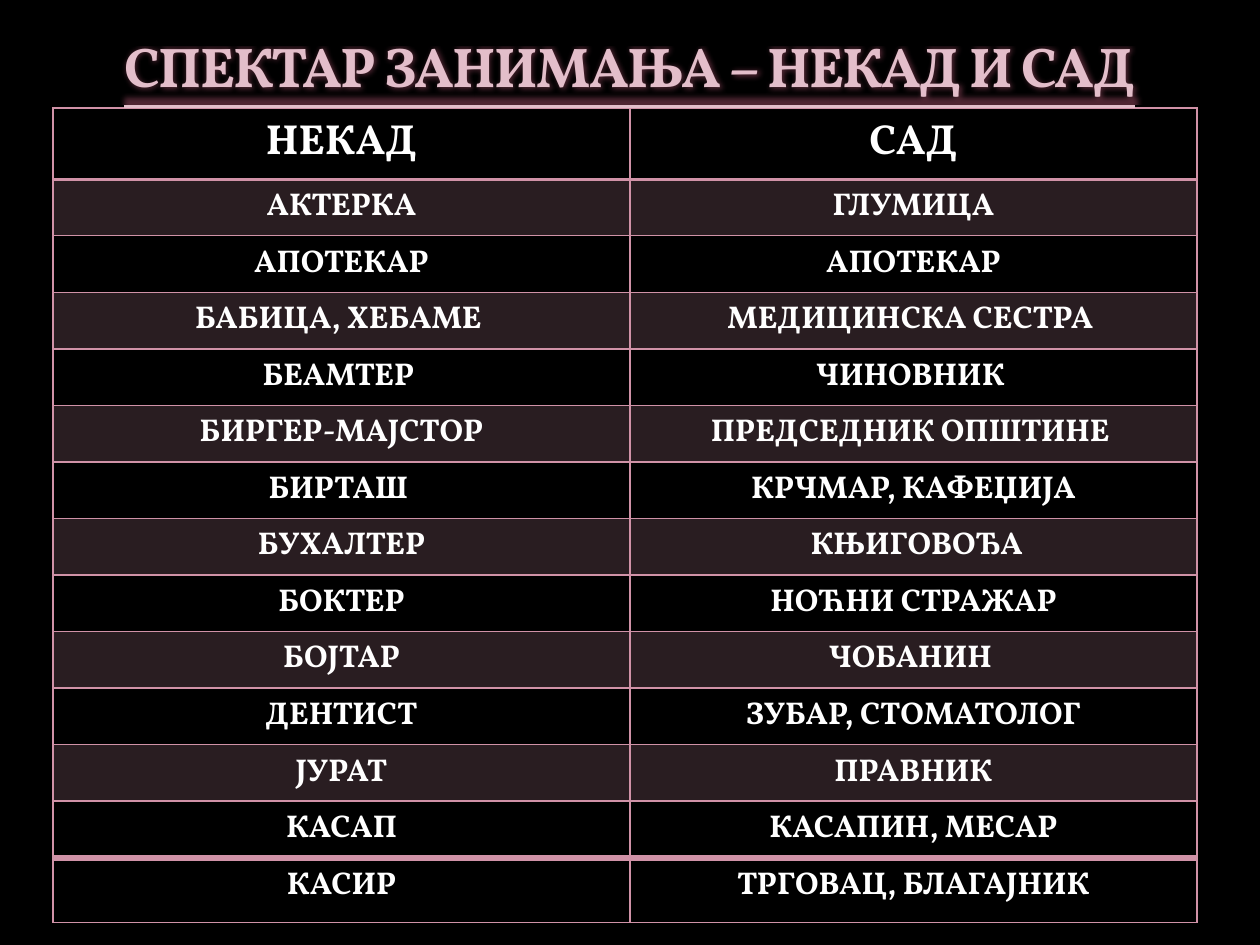
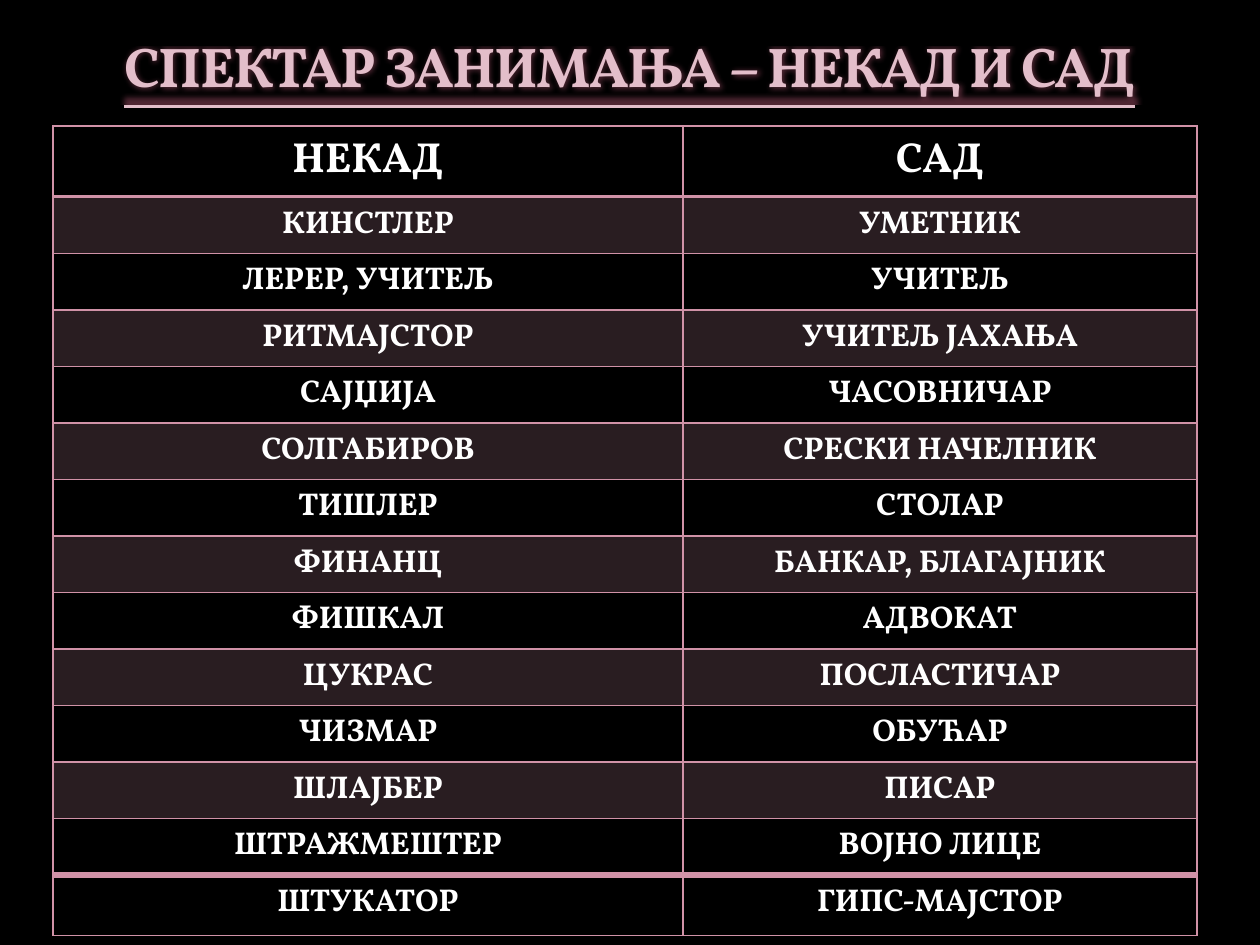
from lxml import etree
from pptx import Presentation
from pptx.dml.color import RGBColor
from pptx.enum.text import MSO_ANCHOR, PP_ALIGN
from pptx.oxml import parse_xml
from pptx.oxml.ns import nsdecls, qn
from pptx.util import Cm, Pt

CENTER = PP_ALIGN.CENTER
TOP = MSO_ANCHOR.TOP
BLANK_LAYOUT = 6

COLORS = {
    "background": "000000",
    "title": "E3BECA",
    "title_outline": "3C4422",
    "title_glow": "E66E92",
    "rose": "D092A7",
    "text": "FFFFFF",
}
FONT = "Vollkorn"
TITLE = "СПЕКТАР ЗАНИМАЊА – НЕКАД И САД"
HEADINGS = ("НЕКАД", "САД")

TITLE_FORMAT = {"name": FONT, "size": Pt(32), "bold": True, "underline": True}
HEADING_FORMAT = {"name": FONT, "size": Pt(24), "bold": True}
ENTRY_FORMAT = {**HEADING_FORMAT, "size": Pt(18)}

TABLE_LEFT = Cm(1.07)
HEADING_HEIGHT = Cm(1.43)
ENTRY_HEIGHT = Cm(1.14)
BAND_ALPHA = 20000

OCCUPATION_SLIDES = [
    {
        "top": Cm(2.18),
        "columns": (Cm(11.63), Cm(11.43)),
        "last_height": Cm(1.3),
        "occupations": [
            ("АКТЕРКА", "ГЛУМИЦА"),
            ("АПОТЕКАР", "АПОТЕКАР"),
            ("БАБИЦА, ХЕБАМЕ ", "МЕДИЦИНСКА СЕСТРА "),
            ("БЕАМТЕР ", "ЧИНОВНИК "),
            ("БИРГЕР-МАЈСТОР", "ПРЕДСЕДНИК ОПШТИНЕ "),
            ("БИРТАШ ", "КРЧМАР, КАФЕЏИЈА"),
            ("БУХАЛТЕР", " КЊИГОВОЂА"),
            ("БОКТЕР", "НОЋНИ СТРАЖАР"),
            ("БОЈТАР", "ЧОБАНИН "),
            ("ДЕНТИСТ", "ЗУБАР, СТОМАТОЛОГ"),
            ("ЈУРАТ", "ПРАВНИК"),
            ("КАСАП", "КАСАПИН, МЕСАР"),
            ("КАСИР", "ТРГОВАЦ, БЛАГАЈНИК"),
        ],
    },
    {
        "top": Cm(2.54),
        "columns": (Cm(12.7), Cm(10.36)),
        "last_height": Cm(1.22),
        "occupations": [
            ("КИНСТЛЕР", "УМЕТНИК"),
            ("ЛЕРЕР, УЧИТЕЉ", "УЧИТЕЉ"),
            ("РИТМАЈСТОР", "УЧИТЕЉ ЈАХАЊА"),
            ("САЈЏИЈА", "ЧАСОВНИЧАР"),
            ("СОЛГАБИРОВ", "СРЕСКИ НАЧЕЛНИК"),
            ("ТИШЛЕР", "СТОЛАР"),
            ("ФИНАНЦ", "БАНКАР, БЛАГАЈНИК"),
            ("ФИШКАЛ", "АДВОКАТ"),
            ("ЦУКРАС", "ПОСЛАСТИЧАР"),
            ("ЧИЗМАР", "ОБУЋАР"),
            ("ШЛАЈБЕР", "ПИСАР"),
            ("ШТРАЖМЕШТЕР", "ВОЈНО ЛИЦЕ"),
            ("ШТУКАТОР", "ГИПС-МАЈСТОР"),
        ],
    },
]


def rgb(name):
    return RGBColor.from_string(COLORS[name])


def write(frame, text, text_format, color):
    """Put one centred, formatted run into a text frame."""
    paragraph = frame.paragraphs[0]
    paragraph.alignment = CENTER
    run = paragraph.add_run()
    run.text = text
    for attribute, value in text_format.items():
        setattr(run.font, attribute, value)
    run.font.color.rgb = rgb(color)
    return run


def add_title_effects(run):
    """Tighten the letters and give them a faint outline and a glow."""
    properties = run.font._element
    properties.set("spc", "-100")
    outline = parse_xml(
        f'<a:ln {nsdecls("a")} w="3200"><a:solidFill>'
        f'<a:srgbClr val="{COLORS["title_outline"]}"><a:alpha val="25000"/></a:srgbClr>'
        '</a:solidFill><a:prstDash val="solid"/></a:ln>')
    glow = parse_xml(
        f'<a:effectLst {nsdecls("a")}><a:glow rad="45500">'
        f'<a:srgbClr val="{COLORS["title_glow"]}"><a:alpha val="35000"/></a:srgbClr>'
        '</a:glow></a:effectLst>')
    properties.insert(0, outline)
    properties.find(qn("a:solidFill")).addnext(glow)


def add_title(slide):
    title_box = slide.shapes.add_textbox(Cm(1.27), Cm(0.43), Cm(22.86), Cm(1.7))
    frame = title_box.text_frame
    frame.word_wrap = True
    frame.vertical_anchor = TOP
    frame.margin_top, frame.margin_bottom = Cm(0.2), 0
    add_title_effects(write(frame, TITLE, TITLE_FORMAT, "title"))


def set_borders(cell, above, below):
    """Draw the cell's four edges; widths are in points."""
    properties = cell._tc.get_or_add_tcPr()
    for edge, width in {"lnL": 1, "lnR": 1, "lnT": above, "lnB": below}.items():
        properties.append(parse_xml(
            f'<a:{edge} {nsdecls("a")} w="{Pt(width)}"><a:solidFill>'
            f'<a:srgbClr val="{COLORS["rose"]}"/></a:solidFill></a:{edge}>'))


def set_band(cell, banded):
    if not banded:
        cell.fill.background()
        return
    cell.fill.solid()
    cell.fill.fore_color.rgb = rgb("rose")
    tint = cell._tc.tcPr.find(qn("a:solidFill"))[0]
    etree.SubElement(tint, qn("a:alpha")).set("val", str(BAND_ALPHA))


def add_occupation_table(slide, top, columns, last_height, occupations):
    rows = [HEADINGS, *occupations]
    last = len(rows) - 1
    heights = [HEADING_HEIGHT] + [ENTRY_HEIGHT] * (last - 1) + [last_height]
    table = slide.shapes.add_table(
        len(rows), len(columns), TABLE_LEFT, top, sum(columns), sum(heights)).table
    table.horz_banding = False
    for column, width in zip(table.columns, columns):
        column.width = width

    # Heavier rules follow the headings and precede the last row
    rule_widths = {1: 2, last: 4}
    for index, (entries, height) in enumerate(zip(rows, heights)):
        table.rows[index].height = height
        text_format = HEADING_FORMAT if index == 0 else ENTRY_FORMAT
        for position, entry in enumerate(entries):
            cell = table.cell(index, position)
            write(cell.text_frame, entry, text_format, "text")
            set_borders(cell, rule_widths.get(index, 1), rule_widths.get(index + 1, 1))
            set_band(cell, index % 2 == 1 and index != last)


def main():
    deck = Presentation()
    deck.slide_width, deck.slide_height = Cm(25.4), Cm(19.05)
    for content in OCCUPATION_SLIDES:
        slide = deck.slides.add_slide(deck.slide_layouts[BLANK_LAYOUT])
        slide.background.fill.solid()
        slide.background.fill.fore_color.rgb = rgb("background")
        add_occupation_table(slide, **content)
        add_title(slide)
    deck.save("out.pptx")


if __name__ == "__main__":
    main()
